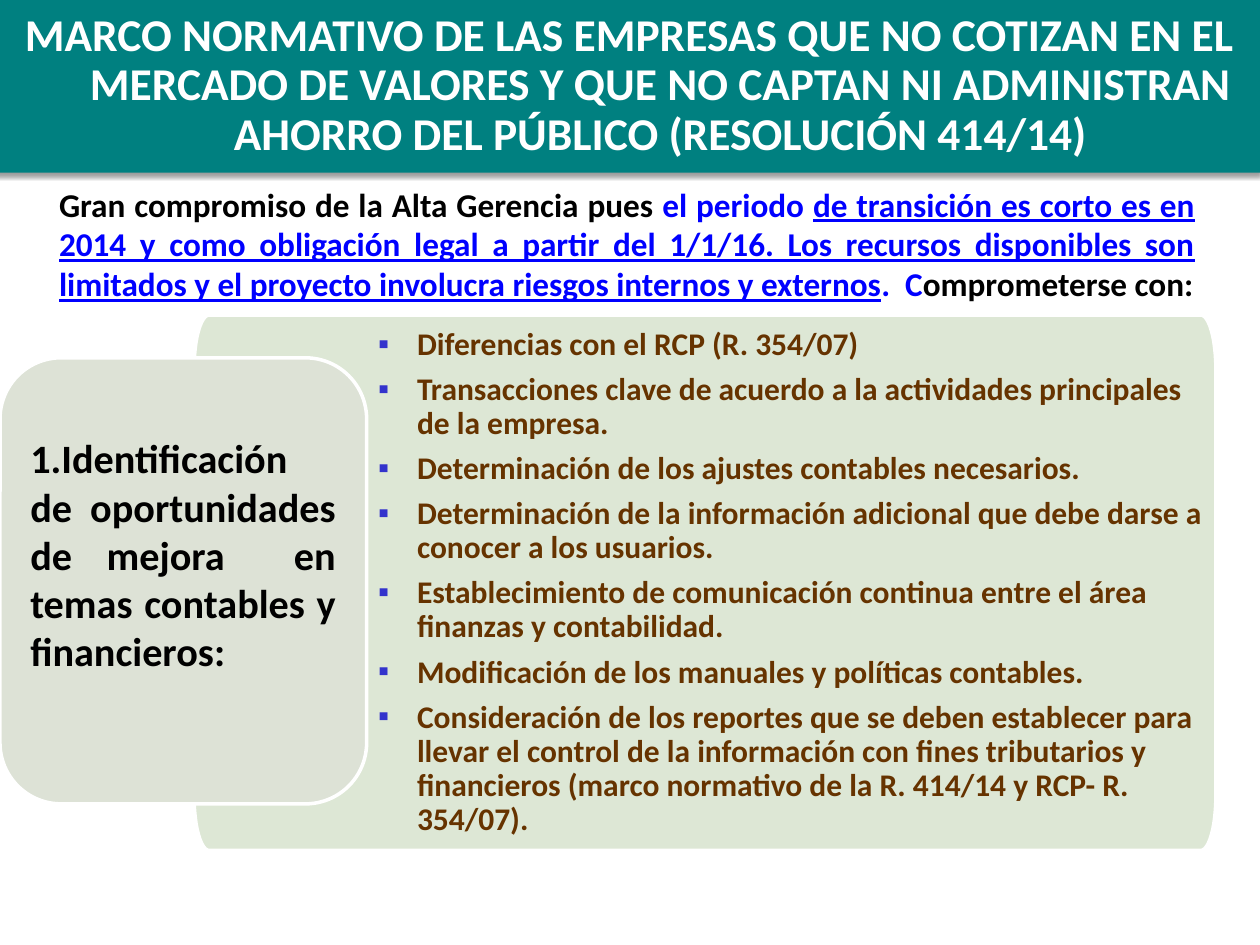
from math import cos, pi, sin

from lxml.etree import SubElement
from pptx import Presentation
from pptx.dml.color import RGBColor
from pptx.enum.shapes import MSO_SHAPE
from pptx.enum.text import MSO_ANCHOR, MSO_AUTO_SIZE, PP_ALIGN
from pptx.oxml.ns import qn
from pptx.util import Inches, Pt

TEAL = RGBColor(0x00, 0x80, 0x80)
WHITE = RGBColor(0xFF, 0xFF, 0xFF)
BLACK = RGBColor(0x00, 0x00, 0x00)
BLUE = RGBColor(0x00, 0x00, 0xFF)
BROWN = RGBColor(0x66, 0x33, 0x00)
INDIGO = RGBColor(0x33, 0x33, 0xCC)
PALE_GREEN = RGBColor(0xDD, 0xE7, 0xD5)
PALE_GREY = RGBColor(0xDD, 0xE2, 0xD6)

TITLE = (
    "MARCO NORMATIVO DE LAS EMPRESAS QUE NO COTIZAN EN EL MERCADO DE VALORES "
    "Y QUE NO CAPTAN NI ADMINISTRAN AHORRO DEL PÚBLICO (RESOLUCIÓN 414/14)"
)
INTRO = [
    ("Gran compromiso de la Alta Gerencia pues ", BLACK, False),
    ("el periodo ", BLUE, False),
    (
        "de transición es corto es en 2014 y como obligación legal a partir del "
        "1/1/16. Los recursos disponibles son limitados y el proyecto involucra "
        "riesgos internos y externos",
        BLUE,
        True,
    ),
    (".  C", BLUE, False),
    ("omprometerse con:", BLACK, False),
]
TOPIC = [
    ("1.Identificación", PP_ALIGN.LEFT),
    ("de oportunidades de mejora  en temas contables y financieros:", PP_ALIGN.JUSTIFY),
]
COMMITMENTS = [
    "Diferencias con el RCP (R. 354/07)",
    "Transacciones clave de acuerdo a la actividades principales de la empresa.",
    "Determinación de los ajustes contables necesarios.",
    "Determinación de la información adicional que debe darse a conocer a los usuarios.",
    "Establecimiento de comunicación continua entre el área finanzas y contabilidad.",
    "Modificación de los manuales y políticas contables.",
    "Consideración de los reportes que se deben establecer para llevar el control de "
    "la información con fines tributarios y financieros (marco normativo de la "
    "R. 414/14 y RCP- R. 354/07).",
]


def place(shape, left, top, width, height):
    """Move and size a shape, in inches."""
    shape.left, shape.top = Inches(left), Inches(top)
    shape.width, shape.height = Inches(width), Inches(height)


def prepare_frame(shape, anchor, margin_x=0.1, margin_y=0.05):
    """Set wrapping, anchor and margins, and return the text frame."""
    frame = shape.text_frame
    frame.word_wrap = True
    frame.auto_size = MSO_AUTO_SIZE.NONE
    frame.vertical_anchor = anchor
    frame.margin_left = frame.margin_right = Inches(margin_x)
    frame.margin_top = frame.margin_bottom = Inches(margin_y)
    return frame


def next_paragraph(frame, index):
    """Return the first paragraph of a frame, or a new one."""
    return frame.add_paragraph() if index else frame.paragraphs[0]


def style_font(paragraph, size, color):
    """Give a paragraph the bold slide font."""
    font = paragraph.font
    font.name, font.size, font.bold = "Calibri", Pt(size), True
    font.color.rgb = color


def hang(paragraph, indent):
    """Set a hanging indent in inches and return the properties element."""
    properties = paragraph._p.get_or_add_pPr()
    properties.set("marL", str(Inches(indent)))
    properties.set("indent", str(-Inches(indent)))
    return properties


def paint(shape, fill, line=None):
    """Fill a shape and draw or hide its outline."""
    shape.shadow.inherit = False
    shape.fill.solid()
    shape.fill.fore_color.rgb = fill
    if line is None:
        shape.line.fill.background()
    else:
        shape.line.color.rgb = line
        shape.line.width = Pt(2)


def add_drop_shadow(shape):
    """Cast a soft black shadow below a shape."""
    effects = shape.element.spPr.find(qn("a:effectLst"))
    shadow = SubElement(
        effects, qn("a:outerShdw"), blurRad=str(Pt(3.1)), dist=str(Pt(1.6)),
        dir="5400000", rotWithShape="0",
    )
    color = SubElement(shadow, qn("a:srgbClr"), val=str(BLACK))
    SubElement(color, qn("a:alpha"), val="38000")


def add_header(page, left, top, width, height):
    """Draw the banner and lay the title over it."""
    banner = page.shapes.add_shape(MSO_SHAPE.RECTANGLE, 0, 0, 0, 0)
    place(banner, left, top, width, height)
    paint(banner, TEAL)
    add_drop_shadow(banner)

    title = page.shapes.title
    place(title, left + 0.08, top + 0.08, width - 0.12, height - 0.12)
    banner.element.addnext(title.element)
    paragraph = prepare_frame(title, MSO_ANCHOR.TOP).paragraphs[0]
    paragraph.text = TITLE
    hang(paragraph, 0.49)
    paragraph.alignment = PP_ALIGN.CENTER
    paragraph.line_spacing = 0.9
    paragraph.space_before = Pt(0)
    style_font(paragraph, 26, WHITE)


def add_intro(page, left, top, width, height):
    """Write the justified introduction with its coloured spans."""
    box = page.shapes.add_textbox(0, 0, 0, 0)
    place(box, left, top, width, height)
    paragraph = prepare_frame(box, MSO_ANCHOR.TOP).paragraphs[0]
    paragraph.alignment = PP_ALIGN.JUSTIFY
    style_font(paragraph, 19, BLACK)
    for text, color, underlined in INTRO:
        span = paragraph.add_run()
        span.text = text
        span.font.color.rgb = color
        span.font.underline = underlined


def add_panel(page, left, top, width, height, radius_x=0.12, radius_y=0.43):
    """Draw a panel with elliptical corners."""
    steps = 12
    centers = [
        (left + width - radius_x, top + height - radius_y),
        (left + radius_x, top + height - radius_y),
        (left + radius_x, top + radius_y),
        (left + width - radius_x, top + radius_y),
    ]
    points = []
    for corner, (center_x, center_y) in enumerate(centers):
        for step in range(steps + 1):
            angle = (corner + step / steps) * pi / 2
            points.append((
                Inches(center_x + radius_x * cos(angle)),
                Inches(center_y + radius_y * sin(angle)),
            ))
    builder = page.shapes.build_freeform(*points[0])
    builder.add_line_segments(points[1:], close=True)
    panel = builder.convert_to_shape()
    paint(panel, PALE_GREEN, WHITE)
    return panel


def add_commitments(page, left, top, width, height):
    """Lay the bulleted list over its panel."""
    panel = add_panel(page, left, top, width, height)
    body = page.placeholders[1]
    text_offset = 1.43
    place(body, left + text_offset, top, width - text_offset, height)
    panel.element.addnext(body.element)
    frame = prepare_frame(body, MSO_ANCHOR.MIDDLE, 0.03, 0.03)
    for index, text in enumerate(COMMITMENTS):
        paragraph = next_paragraph(frame, index)
        paragraph.text = text
        properties = hang(paragraph, 0.31)
        bullet_color = SubElement(properties, qn("a:buClr"))
        SubElement(bullet_color, qn("a:srgbClr"), val=str(INDIGO))
        SubElement(properties, qn("a:buChar"), char="▪")
        paragraph.line_spacing = 0.9
        paragraph.space_before = Pt(0)
        paragraph.space_after = Pt(6.3)
        style_font(paragraph, 18, BROWN)


def add_topic(page, left, top, width, height):
    """Draw the rounded card that names the topic."""
    card = page.shapes.add_shape(MSO_SHAPE.ROUNDED_RECTANGLE, 0, 0, 0, 0)
    place(card, left, top, width, height)
    paint(card, PALE_GREY, WHITE)
    frame = prepare_frame(card, MSO_ANCHOR.TOP)
    frame.margin_top = Inches(0.46)
    for index, (text, alignment) in enumerate(TOPIC):
        paragraph = next_paragraph(frame, index)
        paragraph.text = text
        paragraph.alignment = alignment
        style_font(paragraph, 23, BLACK)


def main():
    """Build the slide and save the deck."""
    deck = Presentation()
    deck.slide_width, deck.slide_height = Inches(10), Inches(7.5)
    page = deck.slides.add_slide(deck.slide_layouts[1])
    add_header(page, -0.04, -0.03, 10.04, 1.4)
    add_intro(page, 0.37, 1.41, 9.21, 1.38)
    add_commitments(page, 1.54, 2.5, 8.11, 4.25)
    add_topic(page, 0, 2.84, 2.91, 3.54)
    deck.save("out.pptx")


if __name__ == "__main__":
    main()
